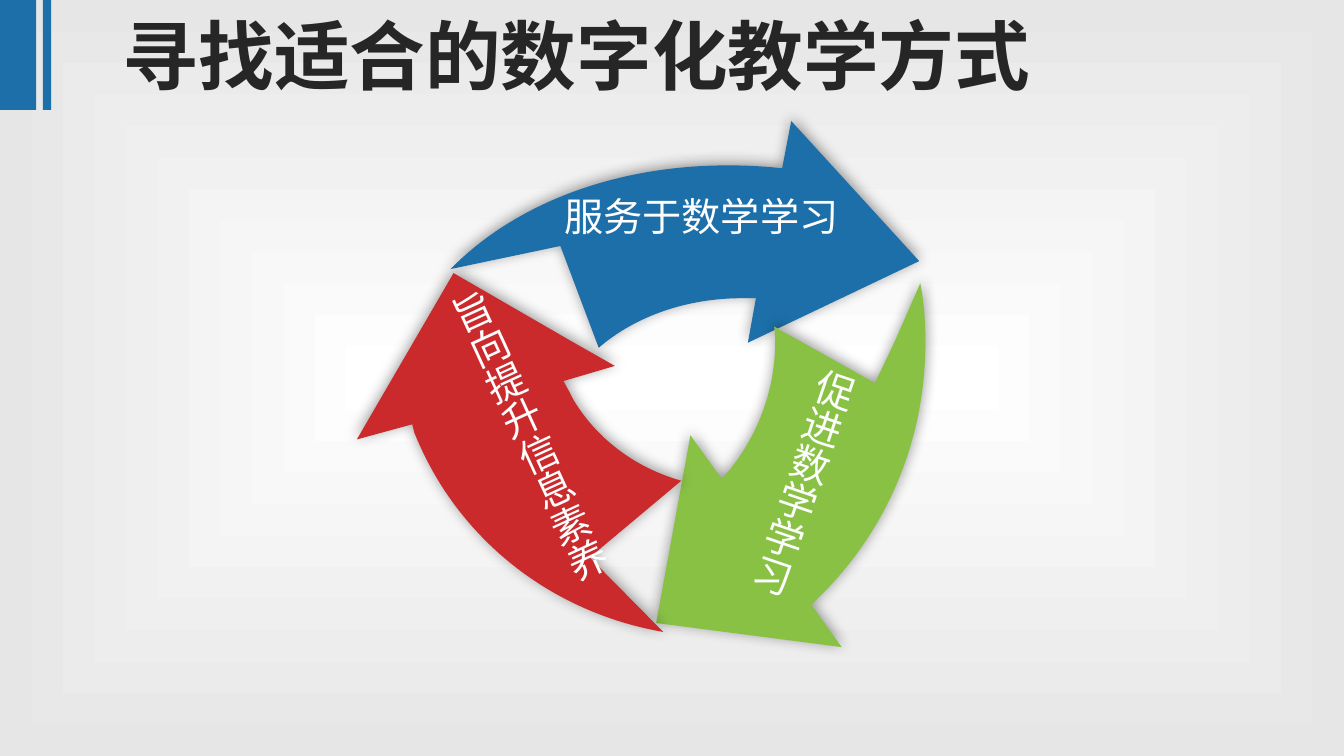
from lxml import etree
from pptx import Presentation
from pptx.dml.color import RGBColor
from pptx.enum.shapes import MSO_SHAPE
from pptx.enum.text import MSO_ANCHOR, MSO_AUTO_SIZE, PP_ALIGN
from pptx.oxml.ns import qn
from pptx.util import Pt

RECTANGLE = MSO_SHAPE.RECTANGLE
TOP = MSO_ANCHOR.TOP
GROW = MSO_AUTO_SIZE.SHAPE_TO_FIT_TEXT
LEFT = PP_ALIGN.LEFT
FONT = "Noto Sans CJK SC"
COLORS = {
    "blue": "1D6FA9", "green": "89C145", "red": "CA2A2B", "title": "262626",
    "label": "FDFDFD", "center": "FFFFFF", "edge": "E6E6E6", "shadow": "000000",
}

BLUE_ARROW = [
    (530, 213), (540, 213), (534.2, 244.8), (656.6, 186.5), (565.2, 86.4),
    (558.7, 120.2), (551.5, 119.5), (460, 111.6, 375, 138.2, 321.8, 192.2),
    (400.3, 175.7), (427.7, 248.4), (453.6, 226, 490.3, 213, 530, 213),
]
GREEN_ARROW = [
    (521.3, 335.5), (515.5, 342), (493.2, 311), (468.7, 445), (601.2, 462.2),
    (579.6, 432), (583.9, 427.7), (633.6, 379.4, 661, 314.6, 661, 244.8),
    (661, 230.4, 660.2, 216.7, 657.4, 202.3), (639.4, 243.4), (625, 273.6),
    (553, 233.3), (553.7, 237.6, 553.7, 241.2, 553.7, 244.8),
    (553.7, 277.2, 542.2, 309.6, 521.3, 335.5),
]
RED_ARROW = [
    (406.8, 280), (402.5, 272.2), (439.2, 261.4), (407.5, 243.4), (324, 195.1),
    (254.9, 313.9), (294.5, 303.1), (295.9, 308.9),
    (301.7, 323.3, 308.9, 337, 316.8, 349.2),
    (352.1, 403.2, 408.2, 439.9, 473.8, 451.4), (421.2, 398.2), (486.7, 343.4),
    (455.8, 334.8, 428.4, 315.4, 411.1, 288),
    (409.7, 285.8, 408.2, 283, 406.8, 280),
]


def color(name):
    """Return the named colour."""
    return RGBColor.from_string(COLORS[name])


def paint_background(page):
    """Fill the page with a gradient spreading from its centre."""
    fill = page.background.fill
    fill.gradient()
    for stop, name in zip(fill.gradient_stops, ("center", "edge")):
        stop.color.rgb = color(name)
    gradient = page.element.find(".//" + qn("a:gradFill"))
    gradient.remove(gradient.find(qn("a:lin")))
    spread = etree.SubElement(gradient, qn("a:path"), {"path": "shape"})
    etree.SubElement(spread, qn("a:fillToRect"), dict.fromkeys("ltrb", "50000"))


def paint_shape(shape, name):
    """Give a shape a plain fill without line or shadow."""
    shape.fill.solid()
    shape.fill.fore_color.rgb = color(name)
    shape.line.fill.background()
    shape.shadow.inherit = False


def add_bar(page, left, width):
    """Add a vertical bar beside the title."""
    bar = page.shapes.add_shape(RECTANGLE, Pt(left), Pt(0), Pt(width), Pt(78.5))
    paint_shape(bar, "blue")


def write_text(box, text, size, name, bold=False):
    """Write one left-aligned line of text in a box."""
    frame = box.text_frame
    frame.text = text
    frame.auto_size = GROW
    frame.vertical_anchor = TOP
    para = frame.paragraphs[0]
    para.alignment = LEFT
    para.space_before = Pt(0)
    font = para.runs[0].font
    font.name, font.size, font.bold = FONT, Pt(size), bold
    font.color.rgb = color(name)
    latin = box.element.find(".//" + qn("a:latin"))
    latin.addnext(latin.makeelement(qn("a:ea"), {"typeface": FONT}))


def add_title(page, text):
    """Place and fill the title placeholder."""
    title = page.shapes.title
    title.left, title.top = Pt(80.6), Pt(2.9)
    title.width, title.height = Pt(740.9), Pt(72.7)
    write_text(title, text, 54, "title", bold=True)
    title.text_frame.word_wrap = True


def bend_edges(arrow, outline):
    """Turn the edges that have control points into cubic curves."""
    edges = arrow.element.findall(".//" + qn("a:lnTo"))
    for edge, step in zip(edges, outline[1:]):
        if len(step) == 2:
            continue
        curve = edge.makeelement(qn("a:cubicBezTo"))
        for x, y in zip(step[::2], step[1::2]):
            etree.SubElement(curve, qn("a:pt"), {
                "x": str(Pt(x) - arrow.left), "y": str(Pt(y) - arrow.top)})
        edge.getparent().replace(edge, curve)


def add_arrow(page, outline, name):
    """Add a curved arrow with a soft shadow."""
    corners = [(Pt(step[-2]), Pt(step[-1])) for step in outline]
    builder = page.shapes.build_freeform(*corners[0], scale=1.0)
    builder.add_line_segments(corners[1:], close=True)
    arrow = builder.convert_to_shape()
    bend_edges(arrow, outline)
    paint_shape(arrow, name)
    effects = arrow.element.spPr.find(qn("a:effectLst"))
    shadow = etree.SubElement(effects, qn("a:outerShdw"), {
        "blurRad": str(Pt(10)), "dist": str(Pt(2)), "dir": "16200000",
        "algn": "ctr", "rotWithShape": "0"})
    tint = etree.SubElement(shadow, qn("a:srgbClr"), {"val": COLORS["shadow"]})
    etree.SubElement(tint, qn("a:alpha"), {"val": "40000"})


def add_label(page, text, place, rotation=0, vertical=False, wrap=False):
    """Add an arrow's label, upright or turned."""
    box = page.shapes.add_textbox(*map(Pt, place))
    write_text(box, text, 28, "label")
    box.text_frame.word_wrap = wrap
    box.rotation = rotation
    if vertical:
        box.element.find(".//" + qn("a:bodyPr")).set("vert", "eaVert")


def main():
    """Build and save the slide."""
    deck = Presentation()
    deck.slide_width, deck.slide_height = Pt(960), Pt(540)
    page = deck.slides.add_slide(deck.slide_layouts[5])
    paint_background(page)
    add_bar(page, -0.7, 26.6)
    add_bar(page, 30.7, 5.8)
    add_title(page, "寻找适合的数字化教学方式")
    add_arrow(page, BLUE_ARROW, "blue")
    add_label(page, "服务于数学学习", (396, 133.9, 222.5, 52.6))
    add_arrow(page, GREEN_ARROW, "green")
    add_label(page, "促进数学学习", (537.8, 251.3, 56.2, 183.6), 18.8, vertical=True)
    add_arrow(page, RED_ARROW, "red")
    add_label(page, "旨向提升信息素养", (360.7, 192.2, 48.2, 286.6), 335.4,
              vertical=True, wrap=True)
    deck.save("out.pptx")


if __name__ == "__main__":
    main()
